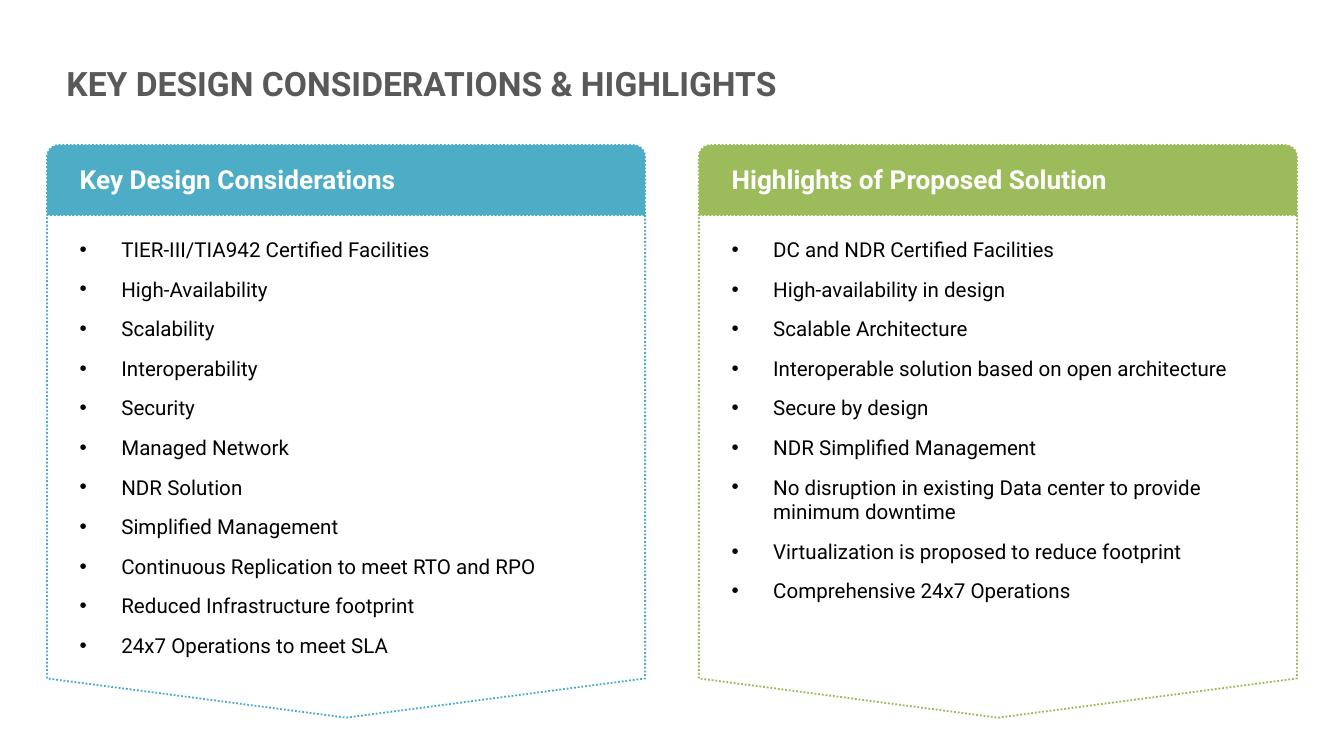
from lxml.etree import SubElement
from pptx import Presentation
from pptx.dml.color import RGBColor
from pptx.enum.dml import MSO_LINE
from pptx.enum.shapes import MSO_SHAPE
from pptx.enum.text import MSO_ANCHOR, MSO_AUTO_SIZE
from pptx.oxml.ns import qn
from pptx.util import Emu, Pt

EMU_PER_PX = 4572  # 200 px to the inch
FONT = "Roboto"
BLUE = RGBColor(0x4D, 0xAD, 0xC6)
GREEN = RGBColor(0x9C, 0xBB, 0x5A)
WHITE = RGBColor(0xFF, 0xFF, 0xFF)
BLACK = RGBColor(0x00, 0x00, 0x00)
GREY = RGBColor(0x59, 0x59, 0x59)

PANEL_LEFT, PANEL_STEP, PANEL_WIDTH = 70, 970, 890
HEADER_TOP, HEADER_HEIGHT = 216, 104
BODY_TOP, BODY_HEIGHT = 320, 748
TEXT_INDENT = 29
BULLET_INDENT = 62

PANELS = [
    ("Key Design Considerations", BLUE, 652, [
        "TIER-III/TIA942 Certified Facilities",
        "High-Availability",
        "Scalability",
        "Interoperability",
        "Security",
        "Managed Network",
        "NDR Solution",
        "Simplified Management",
        "Continuous Replication to meet RTO and RPO",
        "Reduced Infrastructure footprint",
        "24x7 Operations to meet SLA",
    ]),
    ("Highlights of Proposed Solution", GREEN, 570, [
        "DC and NDR Certified Facilities",
        "High-availability in design",
        "Scalable Architecture",
        "Interoperable solution based on open architecture",
        "Secure by design",
        "NDR Simplified Management",
        "No disruption in existing Data center to provide minimum downtime",
        "Virtualization is proposed to reduce footprint",
        "Comprehensive 24x7 Operations",
    ]),
]


def px(length):
    return Emu(length * EMU_PER_PX)


def add_dotted_shape(page, preset, left, top, width, height, fill, line):
    shape = page.shapes.add_shape(preset, px(left), px(top), px(width), px(height))
    shape.shadow.inherit = False
    shape.fill.solid()
    shape.fill.fore_color.rgb = fill
    shape.line.color.rgb = line
    shape.line.width = Pt(1)
    shape.line.dash_style = MSO_LINE.ROUND_DOT
    return shape


def add_text(page, left, top, width, height, text, size, color, bold=False):
    box = page.shapes.add_textbox(px(left), px(top), px(width), px(height))
    frame = box.text_frame
    frame.word_wrap = True
    frame.auto_size = MSO_AUTO_SIZE.SHAPE_TO_FIT_TEXT
    frame.text = text
    for para in frame.paragraphs:
        for span in para.runs:
            span.font.name = FONT
            span.font.size = Pt(size)
            span.font.bold = bold
            span.font.color.rgb = color
    return frame


def add_bullet(para):
    para.space_after = Pt(8)
    properties = para._p.get_or_add_pPr()
    properties.set("marL", str(px(BULLET_INDENT)))
    properties.set("indent", str(-px(BULLET_INDENT)))
    SubElement(properties, qn("a:buFont")).set("typeface", "Arial")
    SubElement(properties, qn("a:buChar")).set("char", "•")


def add_panel(page, left, heading, color, list_height, items):
    """Add a header bar over a downward pointing body with a bulleted list."""
    # The body is a pentagon lying on its side, turned about its centre.
    shift = (PANEL_WIDTH - BODY_HEIGHT) // 2
    body = add_dotted_shape(page, MSO_SHAPE.PENTAGON, left + shift, BODY_TOP - shift,
                            BODY_HEIGHT, PANEL_WIDTH, WHITE, color)
    body.rotation = 90
    body.adjustments[0] = 0.078
    add_dotted_shape(page, MSO_SHAPE.ROUND_2_SAME_RECTANGLE, left, HEADER_TOP,
                     PANEL_WIDTH, HEADER_HEIGHT, color, color)
    text_left = left + TEXT_INDENT
    add_text(page, text_left, 234, 730, 68, heading, 14, WHITE, bold=True)
    bullets = add_text(page, text_left, 343, 808, list_height, "\n".join(items), 11, BLACK)
    for para in bullets.paragraphs:
        add_bullet(para)


def add_title(page):
    title = add_text(page, 99, 84, 1648, 80, "KEY DESIGN CONSIDERATIONS & HIGHLIGHTS",
                     18, GREY, bold=True)
    title.margin_left = 0
    title.vertical_anchor = MSO_ANCHOR.MIDDLE


def main():
    deck = Presentation()
    deck.slide_width, deck.slide_height = px(2000), px(1125)
    page = deck.slides.add_slide(deck.slide_layouts[6])
    for index, panel in enumerate(PANELS):
        add_panel(page, PANEL_LEFT + index * PANEL_STEP, *panel)
    add_title(page)
    deck.save("out.pptx")


if __name__ == "__main__":
    main()
